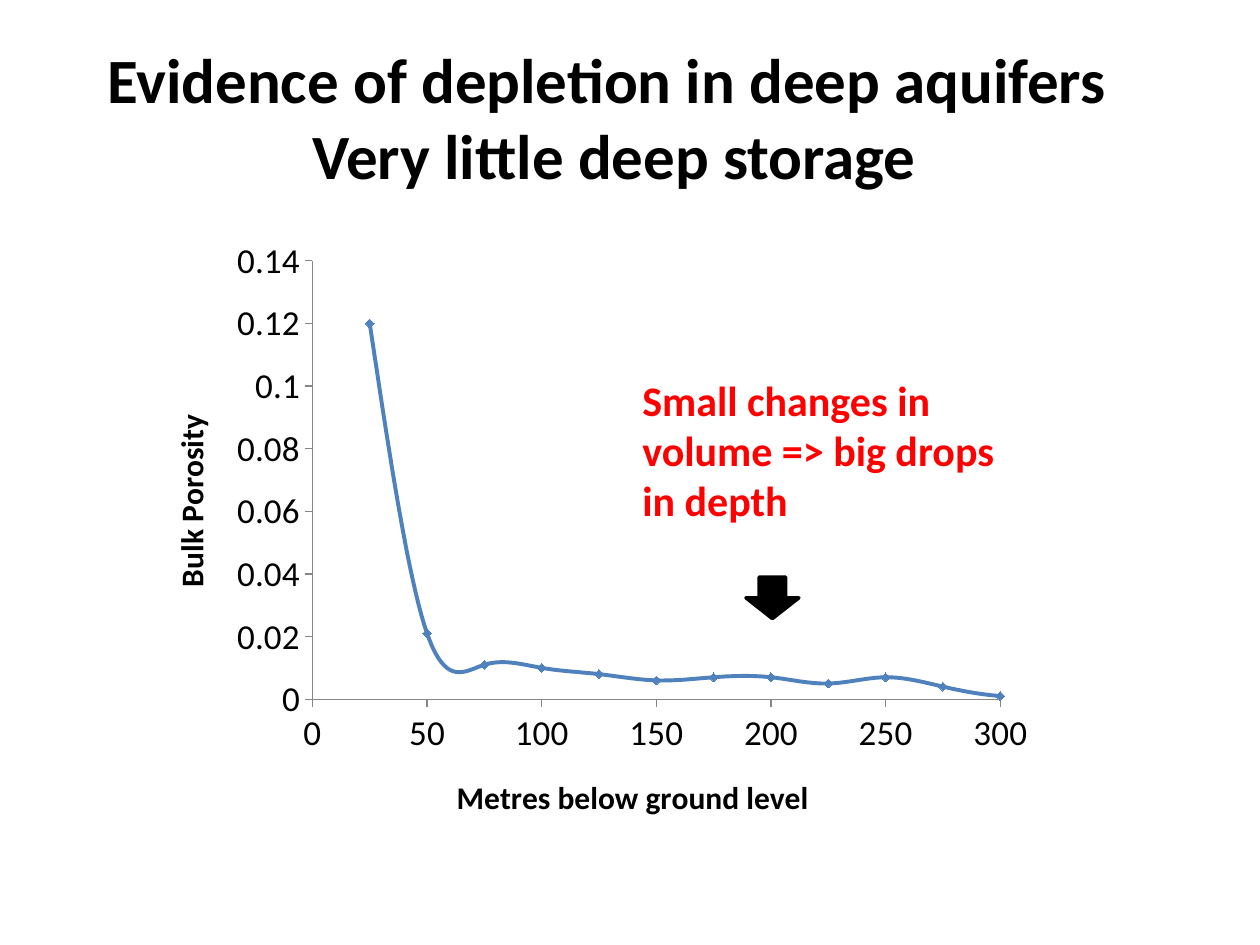
from dataclasses import dataclass

from lxml.etree import Element, SubElement
from pptx import Presentation
from pptx.chart.data import XyChartData
from pptx.dml.color import RGBColor
from pptx.enum.chart import XL_CHART_TYPE, XL_MARKER_STYLE, XL_TICK_LABEL_POSITION, XL_TICK_MARK
from pptx.enum.shapes import MSO_SHAPE
from pptx.enum.text import MSO_ANCHOR, PP_ALIGN
from pptx.oxml.ns import qn
from pptx.util import Inches, Pt

BLACK = RGBColor(0, 0, 0)
RED = RGBColor(0xFF, 0, 0)
BLUE = RGBColor(0x4F, 0x81, 0xBD)
GRAY = RGBColor(0x86, 0x86, 0x86)
FONT = "Calibri"
CHART_WIDTH, CHART_HEIGHT = 7.85, 5.67
DEPTH_STEP = 25
POROSITY = (0.12, 0.021, 0.011, 0.01, 0.008, 0.006, 0.007,
            0.007, 0.005, 0.007, 0.004, 0.001, 0.001)


@dataclass
class Label:
    place: tuple[float, float, float, float]
    lines: tuple[str, ...]
    size: int
    color: RGBColor
    align: PP_ALIGN
    anchor: MSO_ANCHOR


@dataclass
class AxisStyle:
    title: str
    position: tuple[float, float]
    maximum: float
    step: float


TITLE = Label((0.25, 0.3, 9.25, 1.25),
              ("Evidence of depletion in deep aquifers ", "Very little deep storage"),
              36, BLACK, PP_ALIGN.CENTER, MSO_ANCHOR.MIDDLE)
CALLOUT = Label((5, 2.92, 3.17, 1.31), ("Small changes in volume => big drops in depth",),
                24, RED, PP_ALIGN.LEFT, MSO_ANCHOR.TOP)
DEPTH_AXIS = AxisStyle("Metres below ground level", (3.08, 4.53), 300, 50)
POROSITY_AXIS = AxisStyle("Bulk Porosity ", (0.8, 1.61), 0.14, 0.02)


def style_font(font, size: int, color: RGBColor, bold: bool) -> None:
    font.name, font.size, font.bold = FONT, Pt(size), bold
    font.color.rgb = color


def add_label(page, label: Label) -> None:
    box = page.shapes.add_textbox(*map(Inches, label.place))
    frame = box.text_frame
    frame.word_wrap = True
    frame.vertical_anchor = label.anchor
    para = frame.paragraphs[0]
    para.alignment = label.align
    for index, line in enumerate(label.lines):
        if index:
            para.add_line_break()
        span = para.add_run()
        span.text = line
        style_font(span.font, label.size, label.color, True)


def make_layout(**settings: object) -> Element:
    layout = Element(qn("c:layout"))
    manual = SubElement(layout, qn("c:manualLayout"))
    for name, value in settings.items():
        SubElement(manual, qn(f"c:{name}")).set("val", str(value))
    return layout


def place_part(part, index: int, layout: Element) -> None:
    for old in part.findall(qn("c:layout")):
        part.remove(old)
    part.insert(index, layout)


def style_axis(axis, style: AxisStyle) -> None:
    axis.minimum_scale, axis.maximum_scale = 0, style.maximum
    axis.major_unit = style.step
    axis.has_major_gridlines = False
    axis.major_tick_mark = XL_TICK_MARK.OUTSIDE
    axis.minor_tick_mark = XL_TICK_MARK.NONE
    axis.tick_label_position = XL_TICK_LABEL_POSITION.NEXT_TO_AXIS
    axis.tick_labels.number_format = "General"
    axis.tick_labels.number_format_is_linked = False
    style_font(axis.tick_labels.font, 20, BLACK, False)
    axis.format.line.color.rgb = GRAY
    axis.format.line.width = Pt(0.75)
    title = axis.axis_title
    span = title.text_frame.paragraphs[0].add_run()
    span.text = style.title
    style_font(span.font, 18, BLACK, True)
    left, top = style.position
    place_part(title._element, 1, make_layout(xMode="edge", yMode="edge",
                                              x=left / CHART_WIDTH, y=top / CHART_HEIGHT))


def style_series(series) -> None:
    series.format.line.color.rgb = BLUE
    series.format.line.width = Pt(2.25)
    series.marker.style = XL_MARKER_STYLE.DIAMOND
    series.marker.size = 5
    series.marker.format.fill.solid()
    series.marker.format.fill.fore_color.rgb = BLUE
    series.marker.format.line.color.rgb = BLUE
    element = series._element
    for smooth in element.findall(qn("c:smooth")):
        element.remove(smooth)
    SubElement(element, qn("c:smooth")).set("val", "1")
    for point in list(element.iter(qn("c:pt"))):
        if point.findtext(qn("c:v")) == "None":
            point.getparent().remove(point)


def add_porosity_chart(page) -> None:
    data = XyChartData()
    points = data.add_series("Series 1")
    points.add_data_point(None, None)
    for number, porosity in enumerate(POROSITY, start=1):
        points.add_data_point(number * DEPTH_STEP, porosity)
    chart = page.shapes.add_chart(XL_CHART_TYPE.XY_SCATTER_SMOOTH, Inches(0.5), Inches(1.58),
                                  Inches(CHART_WIDTH), Inches(CHART_HEIGHT), data).chart
    chart.has_legend = False
    chart.has_title = False
    style_font(chart.font, 10, BLACK, False)
    plot = chart.plots[0]
    plot.vary_by_categories = False
    style_series(plot.series[0])
    style_axis(chart.category_axis, DEPTH_AXIS)
    style_axis(chart.value_axis, POROSITY_AXIS)
    area = chart._chartSpace.find(".//" + qn("c:plotArea"))
    place_part(area, 0, make_layout(layoutTarget="inner", xMode="edge", yMode="edge",
                                    x=1.98 / CHART_WIDTH, y=0.49 / CHART_HEIGHT,
                                    w=5.46 / CHART_WIDTH, h=3.48 / CHART_HEIGHT))


def add_down_arrow(page) -> None:
    arrow = page.shapes.add_shape(MSO_SHAPE.DOWN_ARROW, Inches(5.92), Inches(4.58),
                                  Inches(0.42), Inches(0.33))
    arrow.shadow.inherit = False
    arrow.fill.solid()
    arrow.fill.fore_color.rgb = BLACK
    arrow.line.color.rgb = BLACK
    arrow.line.width = Pt(2)


def main() -> None:
    """Build the slide on porosity and depletion in deep aquifers."""
    deck = Presentation()
    deck.slide_width, deck.slide_height = Inches(10), Inches(7.5)
    page = deck.slides.add_slide(deck.slide_layouts[6])
    add_label(page, TITLE)
    add_porosity_chart(page)
    add_down_arrow(page)
    add_label(page, CALLOUT)
    deck.save("out.pptx")


if __name__ == "__main__":
    main()
